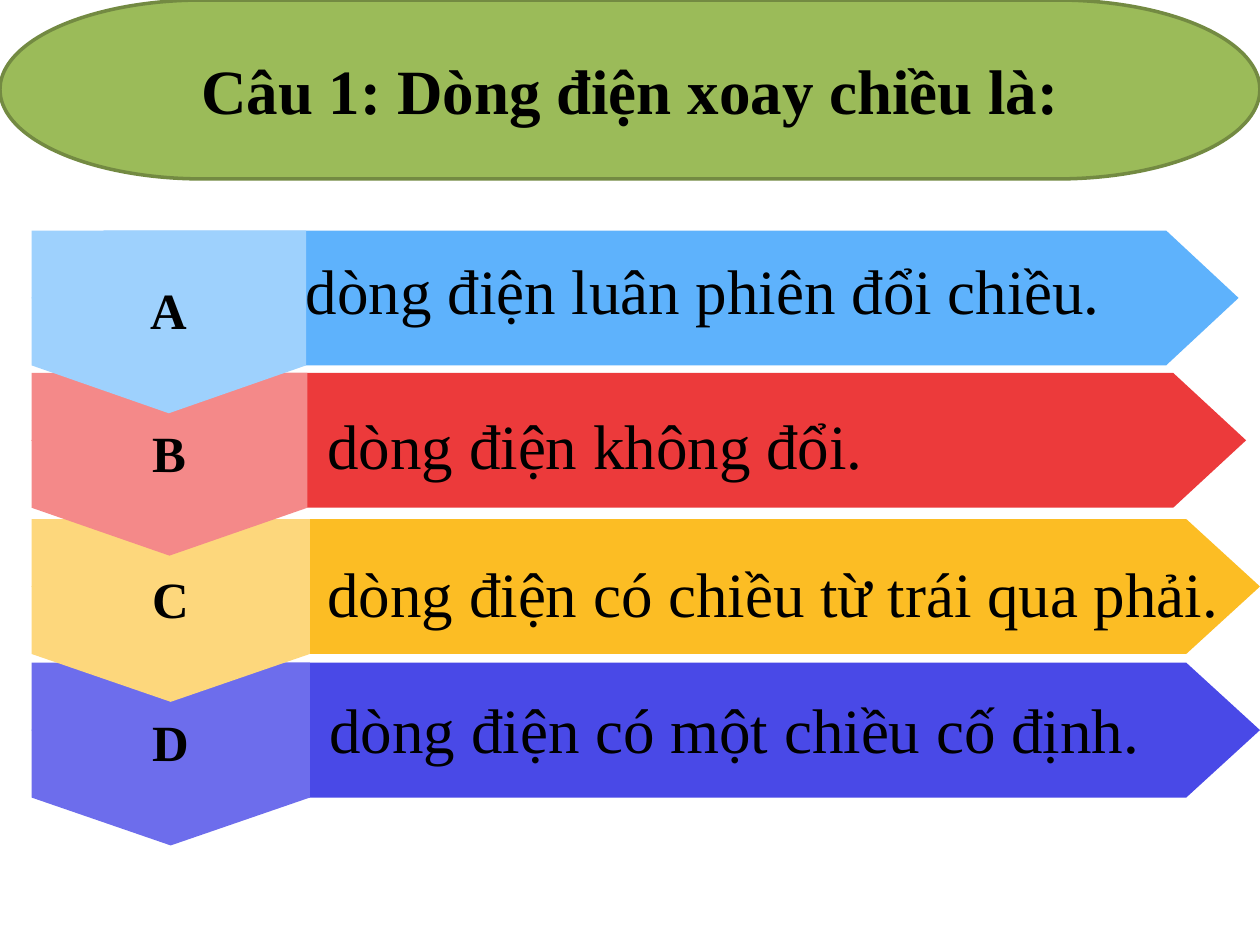
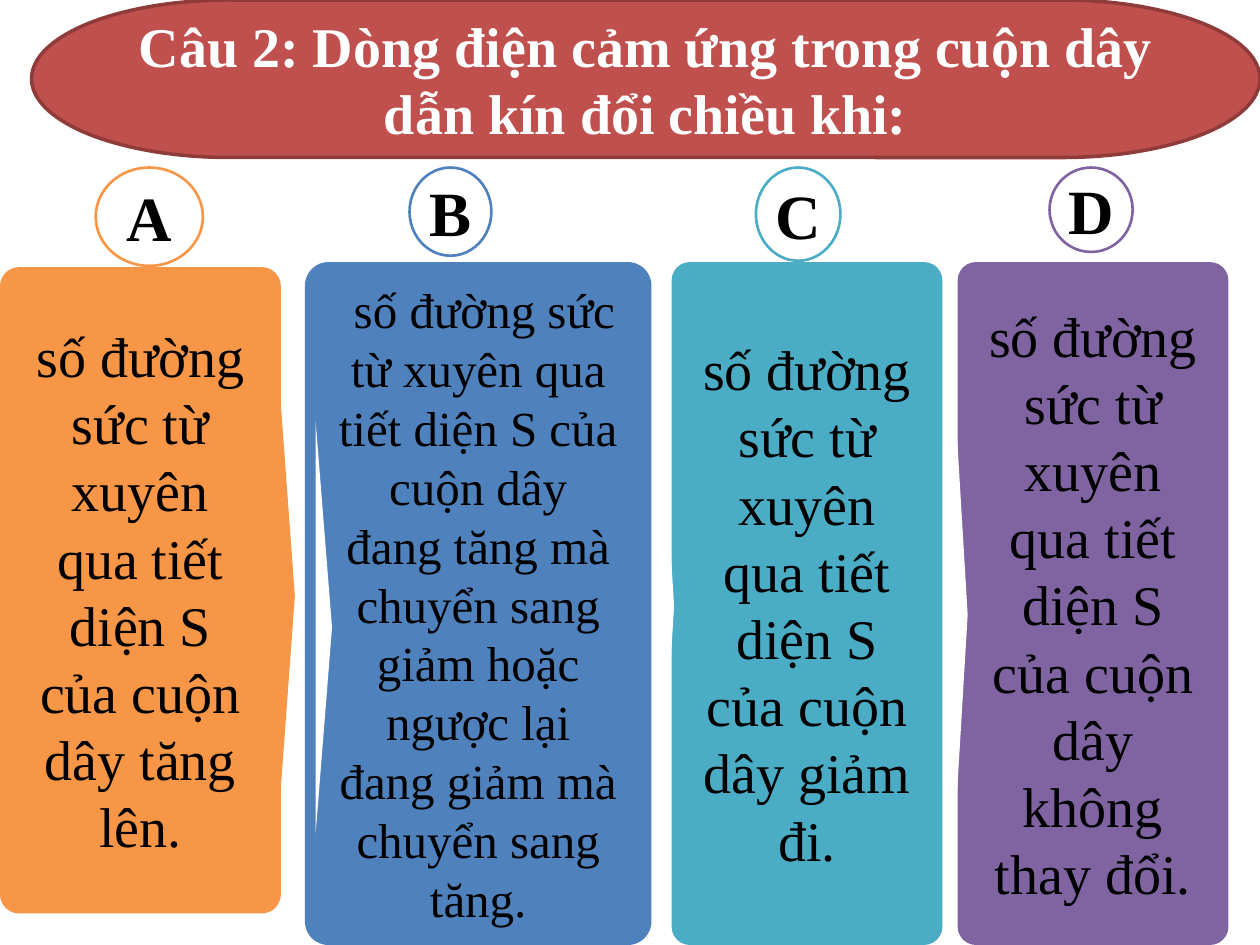
"""Build two multiple-choice question slides about alternating current."""
from pptx import Presentation
from pptx import util as u
from pptx.dml.color import RGBColor
from pptx.enum import shapes, text

FONT = "Times New Roman"
SHAPE = shapes.MSO_SHAPE
CENTER, LEFT = text.PP_ALIGN.CENTER, text.PP_ALIGN.LEFT
COLORS = {
    "black": "000000", "white": "FFFFFF",
    "green": "9BBB59", "green_edge": "738A42",
    "brick": "C0504D", "brick_edge": "8E3B39",
    "sky": "5EB2FC", "sky_tag": "9ED1FD",
    "red": "EC3A3B", "red_tag": "F48989",
    "amber": "FCBD24", "amber_tag": "FDD77C",
    "indigo": "4949E7", "indigo_tag": "6D6DEC",
    "orange": "F79646", "blue": "4F81BD", "teal": "4BACC6", "violet": "8064A2",
}
BAR_HEIGHT, BAR_LEFT, TIP_SHARE = 1.07, 0.25, 0.06
TAG_HEIGHT = 1.45
ANSWER_HEIGHT = 0.4
BADGE_TOP = 1.33

# letter, colour, top, bar width, tag width, answer, answer box (left, top, width), alignment
BARS = [
    ("D", "indigo", 5.26, 9.75, 2.21, "dòng điện có một chiều cố định.", (2.33, 5.58, 7), CENTER),
    ("C", "amber", 4.12, 9.75, 2.21, "dòng điện có chiều từ trái qua phải.", (2.5, 4.5, 7.5), LEFT),
    ("B", "red", 2.96, 9.64, 2.19, "dòng điện không đổi.", (2.5, 3.33, 7.17), LEFT),
    ("A", "sky", 1.83, 9.58, 2.18, "dòng điện luân phiên đổi chiều.", (2.33, 2.1, 7.14), LEFT),
]
# letter, colour, answer, size, card box, badge (left, width, height),
# pointer (colour, centre x, centre y, length, depth)
CARDS = [
    ("A", "orange", "số đường sức từ xuyên qua tiết diện S của cuộn dây tăng lên.", 32,
     (0, 2.12, 2.23, 5.13), (0.76, 0.85, 0.78), ("orange", 2.28, 4.73, 3.28, 0.12)),
    ("B", "blue", " số đường sức từ xuyên qua tiết diện S của cuộn dây đang tăng mà chuyển sang "
     "giảm hoặc ngược lại đang giảm mà chuyển sang tăng.", 28,
     (2.42, 2.08, 2.75, 5.42), (3.25, 0.65, 0.7), ("white", 2.57, 4.98, 3.27, 0.13)),
    ("C", "teal", "số đường sức từ xuyên qua tiết diện S của cuộn dây giảm đi.", 32,
     (5.33, 2.08, 2.15, 5.42), (6, 0.67, 0.74), ("white", 5.3, 4.81, 3.2, 0.1)),
    ("D", "violet", "số đường sức từ xuyên qua tiết diện S của cuộn dây không thay đổi.", 32,
     (7.6, 2.08, 2.15, 5.42), (8.33, 0.66, 0.67), ("white", 7.63, 4.88, 3.35, 0.1)),
]


def rgb(name):
    """Return the named colour."""
    return RGBColor.from_string(COLORS[name])


def set_all(target, values):
    """Set every attribute in values on target."""
    for key, value in values.items():
        setattr(target, key, value)


def paint(shape, fill, edge=None, width=0):
    """Give a shape a flat fill and an optional outline."""
    shape.shadow.inherit = False
    shape.fill.solid()
    shape.fill.fore_color.rgb = rgb(fill)
    if edge:
        shape.line.color.rgb = rgb(edge)
        shape.line.width = u.Pt(width)
    else:
        shape.line.fill.background()


def write(shape, words, size, color="black", bold=False, align=CENTER,
          insets=(0.1, 0.1, 0.1, 0.1), wrap=True):
    """Put one formatted paragraph, centred vertically, in a shape."""
    frame = shape.text_frame
    sides = ("margin_left", "margin_top", "margin_right", "margin_bottom")
    set_all(frame, dict(zip(sides, map(u.Inches, insets))))
    set_all(frame, {"word_wrap": wrap, "vertical_anchor": text.MSO_ANCHOR.MIDDLE})
    paragraph = frame.paragraphs[0]
    paragraph.alignment = align
    run = paragraph.add_run()
    run.text = words
    set_all(run.font, {"name": FONT, "size": u.Pt(size), "bold": bold})
    run.font.color.rgb = rgb(color)


def add_preset(slide, kind, box, fill, edge=None, width=0):
    """Add a painted preset shape."""
    shape = slide.shapes.add_shape(kind, *map(u.Inches, box))
    paint(shape, fill, edge, width)
    return shape


def add_outline(slide, points, fill):
    """Add a painted polygon through points given in inches."""
    start, *others = [(u.Inches(x), u.Inches(y)) for x, y in points]
    builder = slide.shapes.build_freeform(*start)
    builder.add_line_segments(others, close=True)
    polygon = builder.convert_to_shape()
    paint(polygon, fill)
    return polygon


def add_question(slide, box, words, size, fill, color):
    """Add the question banner at the top of a slide."""
    banner = add_preset(slide, SHAPE.FLOWCHART_TERMINATOR, box, fill, fill + "_edge", 2)
    write(banner, words, size, color, bold=True, insets=(0.1, 0.05, 0.1, 0.05))


def add_bar(slide, letter, color, top, width, tag_width, answer, place, align):
    """Add an arrow bar with its folded letter tag and its answer."""
    right, bottom, middle = BAR_LEFT + width, top + BAR_HEIGHT, top + BAR_HEIGHT / 2
    tip = TIP_SHARE * width
    add_outline(slide, [(BAR_LEFT + tip, top), (BAR_LEFT, middle), (BAR_LEFT + tip, bottom),
                        (right - tip, bottom), (right, middle), (right - tip, top)], color)
    tag_right = BAR_LEFT + tag_width
    tag = add_outline(slide, [(BAR_LEFT, top), (BAR_LEFT, bottom),
                              (BAR_LEFT + tag_width / 2, top + TAG_HEIGHT),
                              (tag_right, bottom), (tag_right, top)], color + "_tag")
    write(tag, letter, 29, bold=True, insets=(0.1, 0.1, 0.1, 0.3))
    label = slide.shapes.add_textbox(*map(u.Inches, (*place, ANSWER_HEIGHT)))
    write(label, answer, 36, align=align)


def add_card(slide, letter, color, answer, size, box, badge_place, pointer):
    """Add an answer card with its round letter badge and side pointer."""
    card = add_preset(slide, SHAPE.ROUNDED_RECTANGLE, box, color)
    card.adjustments[0] = 0.068
    write(card, answer, size, insets=(0.2, 0.1, 0.2, 0.1))
    left, width, height = badge_place
    badge = add_preset(slide, SHAPE.OVAL, (left, BADGE_TOP, width, height), "white", color, 1.5)
    write(badge, letter, 36, bold=True, insets=(0, 0, 0, 0), wrap=False)
    fill, x, y, length, depth = pointer
    notch = add_preset(slide, SHAPE.ISOSCELES_TRIANGLE,
                       (x - length / 2, y - depth / 2, length, depth), fill)
    notch.rotation = 90


def main():
    """Build both question slides and save them."""
    deck = Presentation()
    set_all(deck, {"slide_width": u.Inches(10), "slide_height": u.Inches(7.5)})
    blank = deck.slide_layouts[6]

    first = deck.slides.add_slide(blank)
    for bar in BARS:
        add_bar(first, *bar)
    add_question(first, (0, 0, 10, 1.42), "Câu 1: Dòng điện xoay chiều là:", 36, "green", "black")

    second = deck.slides.add_slide(blank)
    for card in CARDS:
        add_card(second, *card)
    add_question(second, (0.25, 0, 9.75, 1.25),
                 "Câu 2: Dòng điện cảm ứng trong cuộn dây dẫn kín đổi chiều khi:",
                 32, "brick", "white")
    deck.save("out.pptx")


if __name__ == "__main__":
    main()
